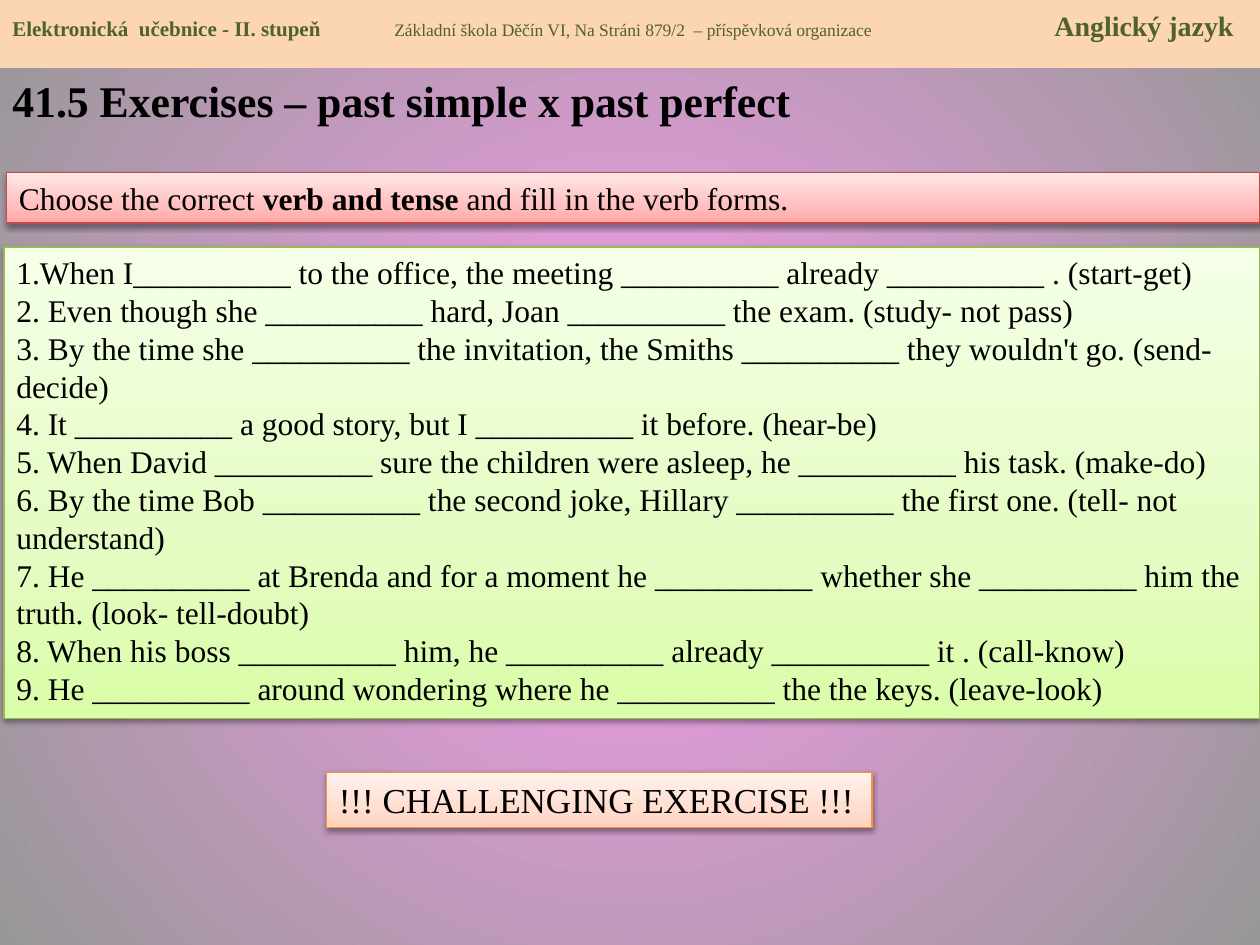
from lxml import etree
from pptx import Presentation
from pptx import util as u
from pptx.dml.color import RGBColor
from pptx.enum import shapes, text
from pptx.oxml.ns import qn

FONT = "Times New Roman"


def set_gradient(owner, fill, stops, shade, **attrs):
    """Fill with (position %, colour) stops; shade is the lin or path element."""
    fill.gradient()
    grad = owner.find(".//" + qn("a:gradFill"))
    for child in list(grad):
        grad.remove(child)
    gs_lst = etree.SubElement(grad, qn("a:gsLst"))
    for pos, color in stops:
        gs = etree.SubElement(gs_lst, qn("a:gs"), pos=str(pos * 1000))
        etree.SubElement(gs, qn("a:srgbClr"), val=color)
    return etree.SubElement(grad, qn("a:" + shade), **attrs)


def add_runs(p, runs, color="000000"):
    """Add (text, size, bold) runs to a left-aligned paragraph."""
    p.alignment = text.PP_ALIGN.LEFT
    for words, size, bold in runs:
        r = p.add_run()
        r.text = words
        r.font.name, r.font.size, r.font.bold = FONT, u.Pt(size), bold
        r.font.color.rgb = RGBColor.from_string(color)


prs = Presentation()
prs.slide_width, prs.slide_height = u.Cm(25.4), u.Cm(19.05)
s = prs.slides.add_slide(prs.slide_layouts[6])

# Background: radial glow from the centre
path = set_gradient(s.background._cSld, s.background.fill,
                    [(0, "FA9CEF"), (100, "979797")], "path", path="circle")
etree.SubElement(path, qn("a:fillToRect"), l="50000", t="50000", r="50000", b="50000")

# Title
tf = s.shapes.add_textbox(u.Cm(0), u.Cm(1.37), u.Cm(25.4), u.Cm(17.68)).text_frame
tf.word_wrap = True
add_runs(tf.paragraphs[0], [("41.5 Exercises – past simple x past perfect", 25, True)])

# Header band: three parts spaced by tab stops
sp = s.shapes.add_shape(shapes.MSO_SHAPE.RECTANGLE, 0, 0, u.Cm(25.4), u.Cm(1.37))
sp.shadow.inherit = False
sp.fill.solid()
sp.fill.fore_color.rgb = RGBColor.from_string("FCD5B5")
sp.line.fill.background()
tf = sp.text_frame
tf.vertical_anchor = text.MSO_ANCHOR.TOP
tf.margin_top = u.Cm(0.18)
p = tf.paragraphs[0]
add_runs(p, [("Elektronická  učebnice - II. stupeň", 12, True),
             ("\tZákladní škola Děčín VI, Na Stráni 879/2  – příspěvková organizace\t", 10, False),
             ("Anglický jazyk", 16, True)], "4F6228")
tabs = etree.SubElement(p._p.get_or_add_pPr(), qn("a:tabLst"))
for pos, algn in [(7.7, "l"), (24.62, "r")]:
    etree.SubElement(tabs, qn("a:tab"), pos=str(u.Cm(pos)), algn=algn)

# Exercise, instruction and challenge boxes
exercises = [
    "1.When I__________ to the office, the meeting __________ already __________ . (start-get)",
    "2. Even though she __________ hard, Joan __________ the exam. (study- not pass)",
    "3. By the time she __________ the invitation, the Smiths __________ they wouldn't go. (send- decide)",
    "4. It __________ a good story, but I __________ it before. (hear-be)",
    "5. When David __________ sure the children were asleep, he __________ his task. (make-do)",
    "6. By the time Bob __________ the second joke, Hillary __________ the first one. (tell- not understand)",
    "7. He __________ at Brenda and for a moment he __________ whether she __________ him the truth. (look- tell-doubt)",
    "8. When his boss __________ him, he __________ already __________ it . (call-know)",
    "9. He __________ around wondering where he __________ the the keys. (leave-look)",
]
instruction = [("Choose the correct ", 18, False), ("verb and tense ", 18, True),
               ("and fill in the verb forms.", 18, False)]
boxes = [
    ((0.08, 4.98, 25.32, 9.5), ("DAFDA7", "E4FCC2", "F5FFE7"), "98B955",
     [[(line, 18, False)] for line in exercises]),
    ((0.13, 3.48, 25.27, 1.02), ("FFA6A5", "FFC0BF", "FFE7E7"), "BF4C48", [instruction]),
    ((6.58, 15.57, 11.0, 1.12), ("FFD2BD", "FFDED0", "FFF2ED"), "F69240",
     [[("!!! CHALLENGING EXERCISE !!!", 20, False)]]),
]
for place, colors, edge, paragraphs in boxes:
    sp = s.shapes.add_shape(shapes.MSO_SHAPE.RECTANGLE, *map(u.Cm, place))
    set_gradient(sp._element.spPr, sp.fill, zip((0, 35, 100), colors), "lin",
                 ang="16200000", scaled="0")
    sp.line.color.rgb = RGBColor.from_string(edge)
    sp.line.width = u.Pt(0.75)

    # Soft shadow straight below
    sp.shadow.inherit = False
    effects = sp._element.spPr.find(qn("a:effectLst"))
    shadow = etree.SubElement(effects, qn("a:outerShdw"), blurRad="40000", dist="20000",
                              dir="5400000", rotWithShape="0")
    color = etree.SubElement(shadow, qn("a:srgbClr"), val="000000")
    etree.SubElement(color, qn("a:alpha"), val="38000")

    tf = sp.text_frame
    tf.word_wrap = True
    tf.vertical_anchor = text.MSO_ANCHOR.TOP
    for i, runs in enumerate(paragraphs):
        add_runs(tf.add_paragraph() if i else tf.paragraphs[0], runs)

prs.save("out.pptx")
